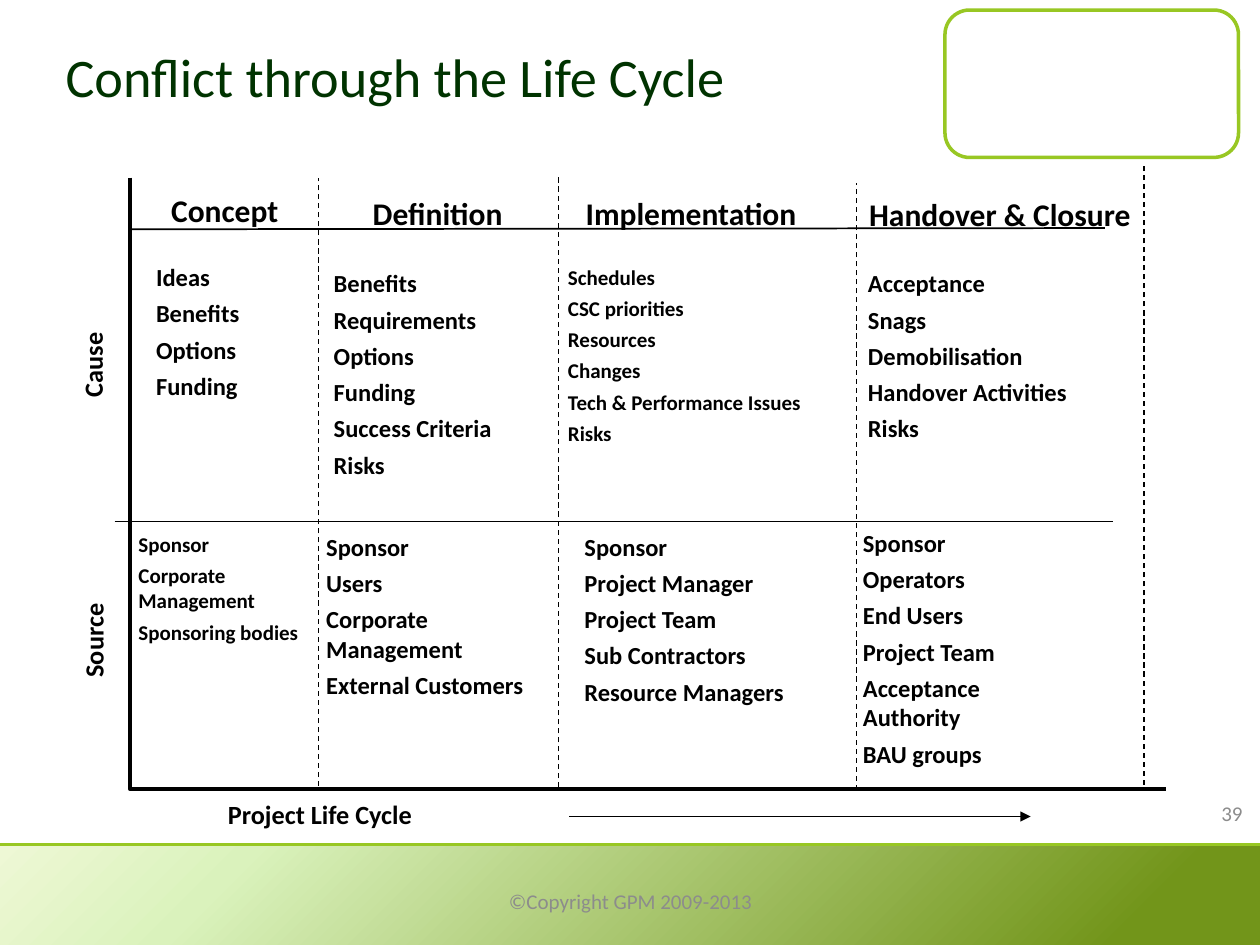
"""Build the slide showing conflict causes and sources through the project life cycle."""
from lxml.etree import SubElement
from pptx import Presentation
from pptx.dml.color import RGBColor
from pptx.enum.dml import MSO_LINE
from pptx.enum.shapes import MSO_CONNECTOR, MSO_SHAPE
from pptx.enum.text import MSO_ANCHOR, PP_ALIGN
from pptx.oxml.ns import qn
from pptx.util import Inches, Pt

BLACK = RGBColor(0x00, 0x00, 0x00)
WHITE = RGBColor(0xFF, 0xFF, 0xFF)
LIME = RGBColor(0x98, 0xC7, 0x23)
DARK_GREEN = RGBColor(0x00, 0x33, 0x00)
GREY = RGBColor(0x8C, 0x8C, 0x8C)
BAND_STOPS = [(0, "EEF8D5"), (19, "DAF2BC"), (89, "72951A")]

TITLE = "Conflict through the Life Cycle"
PHASES = [
    ("Concept", (1.26, 1.47, 1.15, 0.41)),
    ("Definition", (2.86, 1.49, 1.35, 0.41)),
    ("Implementation", (4.55, 1.49, 2.04, 0.41)),
    ("Handover & Closure", (6.8, 1.5, 2.67, 0.4)),
]
CAUSES = [
    (["Ideas", "Benefits", "Options", "Funding"], (1.14, 2.03, 1.3, 1.59), 14),
    (["Benefits", "Requirements", "Options", "Funding", "Success Criteria", "Risks"],
     (2.55, 2.08, 1.98, 1.82), 14),
    (["Schedules", "CSC priorities", "Resources", "Changes",
      "Tech & Performance Issues", "Risks"], (4.41, 2.05, 2.43, 1.57), 12),
    (["Acceptance", "Snags", "Demobilisation", "Handover Activities", "Risks"],
     (6.79, 2.08, 1.98, 1.52), 14),
]
SOURCES = [
    (["Sponsor", "Corporate Management", "Sponsoring bodies"], (1, 4.17, 1.49, 1.2), 12),
    (["Sponsor", "Users", "Corporate Management", "External Customers"],
     (2.49, 4.17, 1.91, 1.45), 14),
    (["Sponsor", "Project Manager", "Project Team", "Sub Contractors", "Resource Managers"],
     (4.54, 4.17, 2.17, 1.52), 14),
    (["Sponsor", "Operators", "End Users", "Project Team", "Acceptance Authority",
      "BAU groups"], (6.75, 4.14, 1.91, 2.05), 14),
]
AXIS_LABELS = [
    ("Cause", (0.38, 2.69, 0.74, 0.38), 270),
    ("Source", (0.35, 4.88, 0.81, 0.38), 270),
    ("Project Life Cycle", (1.71, 6.29, 1.82, 0.36), 0),
]
FOOTERS = [
    ("©Copyright GPM 2009-2013", (3.42, 6.95, 3.17, 0.4), PP_ALIGN.CENTER),
    ("39", (7.63, 6.25, 2.33, 0.4), PP_ALIGN.RIGHT),
]
AXIS = [(1.03, 1.41), (1.03, 6.26), (9.25, 6.26)]
PHASE_DIVIDERS = [(2.53, 6.24, 1.41), (4.43, 6.25, 1.38), (6.8, 6.27, 1.45), (9.08, 6.23, 1.32)]
ROW_DIVIDERS = [((1.04, 1.82), (8.77, 1.81)), ((0.91, 4.14), (8.83, 4.14))]


def inches(values):
    return [Inches(value) for value in values]


def write(shape, lines, size, color=BLACK, bold=True, align=PP_ALIGN.LEFT,
          anchor=MSO_ANCHOR.TOP, wrap=True, gap=0):
    frame = shape.text_frame
    frame.word_wrap = wrap
    frame.vertical_anchor = anchor
    frame.text = "\n".join(lines)
    for paragraph in frame.paragraphs:
        paragraph.alignment = align
        paragraph.space_after = Pt(gap)
        font = paragraph.font
        font.name, font.size, font.bold = "Calibri", Pt(size), bold
        font.color.rgb = color


def add_text(slide, lines, box, size, rotation=0, **text_format):
    shape = slide.shapes.add_textbox(*inches(box))
    shape.rotation = rotation
    write(shape, lines, size, **text_format)


def add_line(slide, start, end, width, color=BLACK, dash=None, arrow=False):
    connector = slide.shapes.add_connector(MSO_CONNECTOR.STRAIGHT, *inches(start + end))
    connector.line.color.rgb = color
    connector.line.width = Pt(width)
    if dash:
        connector.line.dash_style = dash
    if arrow:
        SubElement(connector.line._get_or_add_ln(), qn("a:tailEnd"), type="triangle")
    SubElement(connector._element.spPr, qn("a:effectLst"))


def add_template_art(slide):
    frame = slide.shapes.add_shape(MSO_SHAPE.ROUNDED_RECTANGLE, *inches((7.5, 0.08, 2.33, 1.17)))
    frame.shadow.inherit = False
    frame.fill.solid()
    frame.fill.fore_color.rgb = WHITE
    frame.line.color.rgb = LIME
    frame.line.width = Pt(2)

    band = slide.shapes.add_shape(MSO_SHAPE.RECTANGLE, *inches((0, 6.71, 10, 0.82)))
    band.shadow.inherit = False
    band.line.fill.background()
    band.fill.gradient()
    band.fill.gradient_angle = 315
    stops = band._element.spPr.find(".//" + qn("a:gsLst"))
    stops.clear()
    for position, color in BAND_STOPS:
        stop = SubElement(stops, qn("a:gs"), pos=str(position * 1000))
        SubElement(stop, qn("a:srgbClr"), val=color)
    add_line(slide, (0, 6.7), (10, 6.7), 1.5, LIME)


def add_grid(slide):
    start, *corners = [tuple(inches(point)) for point in AXIS]
    builder = slide.shapes.build_freeform(*start)
    builder.add_line_segments(corners, close=False)
    axis = builder.convert_to_shape()
    axis.shadow.inherit = False
    axis.fill.background()
    axis.line.color.rgb = BLACK
    axis.line.width = Pt(2.25)
    for x, bottom, top in PHASE_DIVIDERS:
        add_line(slide, (x, bottom), (x, top), 0.75, dash=MSO_LINE.DASH)
    for start, end in ROW_DIVIDERS:
        add_line(slide, start, end, 1)
    add_line(slide, (4.52, 6.48), (8.18, 6.48), 0.75, arrow=True)


def main():
    presentation = Presentation()
    presentation.slide_width, presentation.slide_height = inches((10, 7.5))
    slide = presentation.slides.add_slide(presentation.slide_layouts[5])
    add_template_art(slide)

    title = slide.shapes.title
    title.left, title.top, title.width, title.height = inches((0.42, 0, 9.34, 1.21))
    write(title, [TITLE], 31, color=DARK_GREEN, bold=False, anchor=MSO_ANCHOR.MIDDLE)

    add_grid(slide)
    for phase, box in PHASES:
        add_text(slide, [phase], box, 18, wrap=False)
    for lines, box, size in CAUSES + SOURCES:
        add_text(slide, lines, box, size, gap=round(size * 0.28, 1))
    for label, box, rotation in AXIS_LABELS:
        add_text(slide, [label], box, 15, rotation=rotation, wrap=False)
    for text, box, align in FOOTERS:
        add_text(slide, [text], box, 12, color=GREY, bold=False, align=align,
                 anchor=MSO_ANCHOR.MIDDLE)
    presentation.save("out.pptx")


if __name__ == "__main__":
    main()
